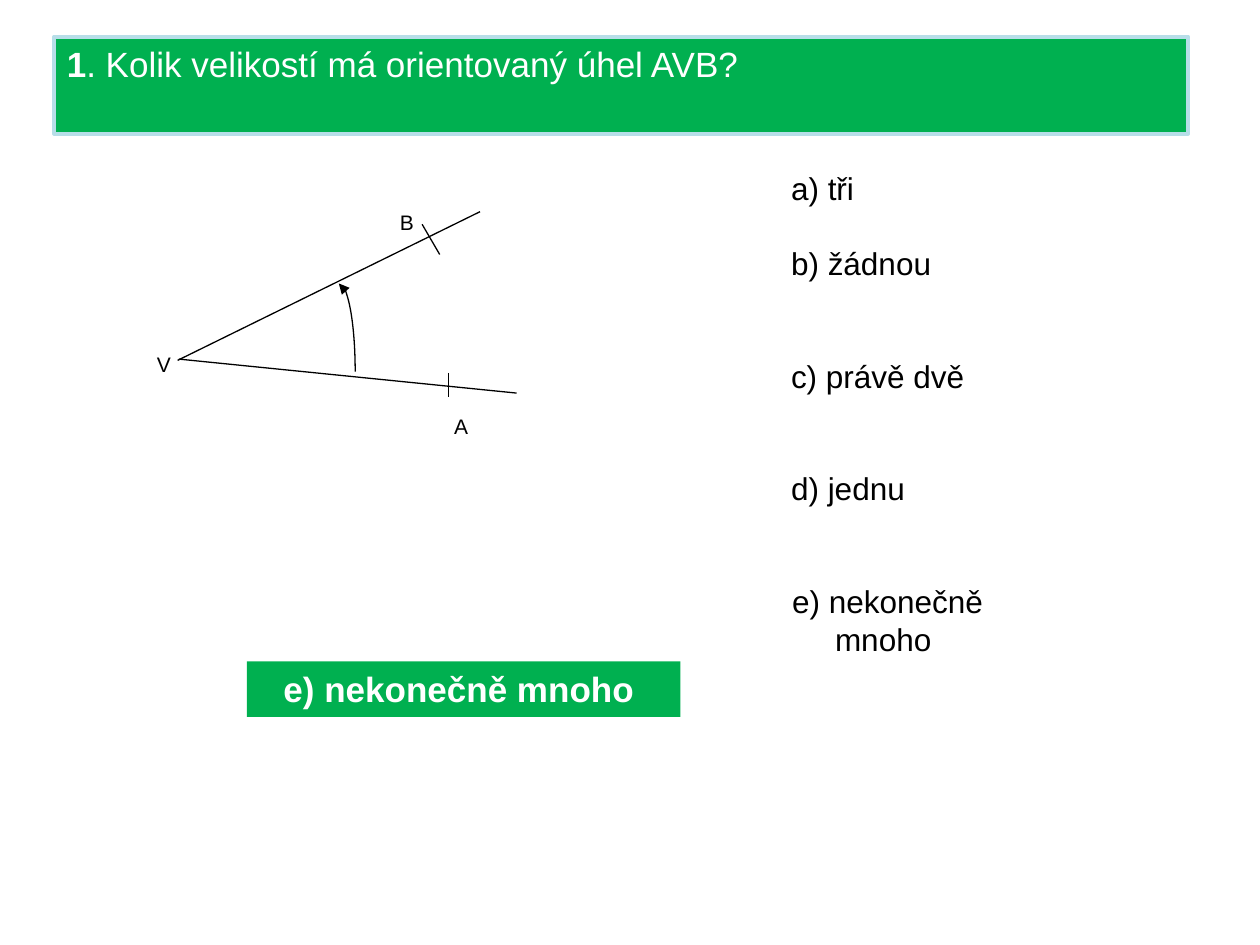
"""Build a quiz slide about the sizes of the oriented angle AVB."""
from typing import NamedTuple

import lxml.etree
import pptx
import pptx.dml.color
import pptx.enum.shapes
import pptx.enum.text
import pptx.oxml.ns
import pptx.util

Inches = pptx.util.Inches
Pt = pptx.util.Pt
Align = pptx.enum.text.PP_ALIGN
Anchor = pptx.enum.text.MSO_ANCHOR
Preset = pptx.enum.shapes.MSO_SHAPE

GREEN = "00B050"
PALE_BLUE = "B7DEE8"
BLACK = "000000"
WHITE = "FFFFFF"
LINE_PITCH = 21.5


class Segment(NamedTuple):
    x1: float
    y1: float
    x2: float
    y2: float


class PointLabel(NamedTuple):
    letter: str
    left: float
    top: float


class Option(NamedTuple):
    wording: str
    blank_lines: int
    align: Align


SEGMENTS = [
    Segment(1.41, 2.86, 3.81, 1.68),
    Segment(1.42, 2.85, 4.1, 3.12),
    Segment(3.35, 1.78, 3.49, 2.02),
    Segment(3.56, 2.96, 3.56, 3.15),
]
POINT_LABELS = [
    PointLabel("V", 1.18, 2.79),
    PointLabel("A", 3.54, 3.28),
    PointLabel("B", 3.11, 1.66),
]
OPTIONS = [
    Option("a) tři", 0, Align.LEFT),
    Option("b) žádnou", 1, Align.LEFT),
    Option("c) právě dvě", 2, Align.LEFT),
    Option("d) jednu", 2, Align.LEFT),
    Option("e) nekonečně mnoho ", 2, Align.CENTER),
]


def rgb(value: str) -> pptx.dml.color.RGBColor:
    return pptx.dml.color.RGBColor.from_string(value)


def add_run(paragraph, wording: str, size: float, color: str, bold: bool = False) -> None:
    run = paragraph.add_run()
    run.text = wording
    run.font.name = "Arial"
    run.font.size = Pt(size)
    run.font.bold = bold
    run.font.color.rgb = rgb(color)


def fill_solid(shape, color: str) -> None:
    shape.fill.solid()
    shape.fill.fore_color.rgb = rgb(color)


def set_line(line, color: str, width: float) -> None:
    line.color.rgb = rgb(color)
    line.width = Pt(width)


def add_question(slide) -> None:
    question = slide.shapes.title
    question.left, question.top = Inches(0.43), Inches(0.29)
    question.width, question.height = Inches(9), Inches(0.77)
    fill_solid(question, GREEN)
    set_line(question.line, PALE_BLUE, 2.25)
    question.text_frame.vertical_anchor = Anchor.TOP
    paragraph = question.text_frame.paragraphs[0]
    paragraph.alignment = Align.LEFT
    add_run(paragraph, "1", 20, WHITE, bold=True)
    add_run(paragraph, ". Kolik velikostí má orientovaný úhel AVB?", 20, WHITE)


def add_segment(slide, segment: Segment) -> None:
    connector = slide.shapes.add_connector(
        pptx.enum.shapes.MSO_CONNECTOR.STRAIGHT, *map(Inches, segment))
    set_line(connector.line, BLACK, 0.75)
    lxml.etree.SubElement(connector._element.spPr, pptx.oxml.ns.qn("a:effectLst"))


def add_angle_arc(slide) -> None:
    arc = slide.shapes.add_shape(
        Preset.ARC, Inches(2.56), Inches(2.25), Inches(0.26), Inches(1.4))
    arc.fill.background()
    set_line(arc.line, BLACK, 0.75)
    arc.shadow.inherit = False
    outline = arc._element.spPr.find(pptx.oxml.ns.qn("a:ln"))
    lxml.etree.SubElement(outline, pptx.oxml.ns.qn("a:headEnd"), type="triangle")


def add_text_frame(slide, left: float, top: float, width: float, height: float):
    frame = slide.shapes.add_textbox(
        Inches(left), Inches(top), Inches(width), Inches(height)).text_frame
    frame.word_wrap = True
    return frame


def add_point_label(slide, label: PointLabel) -> None:
    frame = add_text_frame(slide, label.left, label.top, 0.24, 0.2)
    frame.margin_left = frame.margin_right = 0
    frame.margin_top = frame.margin_bottom = 0
    paragraph = frame.paragraphs[0]
    paragraph.alignment = Align.CENTER
    add_run(paragraph, label.letter, 12, BLACK)


def add_options(slide, options: list[Option]) -> None:
    frame = add_text_frame(slide, 6.18, 1.29, 1.73, 3.13)
    for index, option in enumerate(options):
        paragraph = frame.add_paragraph() if index else frame.paragraphs[0]
        paragraph.alignment = option.align
        paragraph.line_spacing = Pt(LINE_PITCH)
        if option.blank_lines:
            paragraph.space_before = Pt(option.blank_lines * LINE_PITCH)
        add_run(paragraph, option.wording, 18, BLACK)


def add_answer(slide, wording: str) -> None:
    answer = slide.shapes.add_shape(
        Preset.RECTANGLE, Inches(1.96), Inches(5.25), Inches(3.44), Inches(0.44))
    fill_solid(answer, GREEN)
    answer.line.fill.background()
    answer.shadow.inherit = False
    answer.text_frame.word_wrap = True
    answer.text_frame.vertical_anchor = Anchor.TOP
    paragraph = answer.text_frame.paragraphs[0]
    paragraph.alignment = Align.CENTER
    add_run(paragraph, wording, 20, WHITE, bold=True)


def main() -> None:
    presentation = pptx.Presentation()
    presentation.slide_width, presentation.slide_height = Inches(10), Inches(7.5)
    slide = presentation.slides.add_slide(presentation.slide_layouts[5])
    add_question(slide)
    for segment in SEGMENTS:
        add_segment(slide, segment)
    add_angle_arc(slide)
    for label in POINT_LABELS:
        add_point_label(slide, label)
    add_options(slide, OPTIONS)
    add_answer(slide, OPTIONS[-1].wording)
    presentation.save("out.pptx")


if __name__ == "__main__":
    main()
